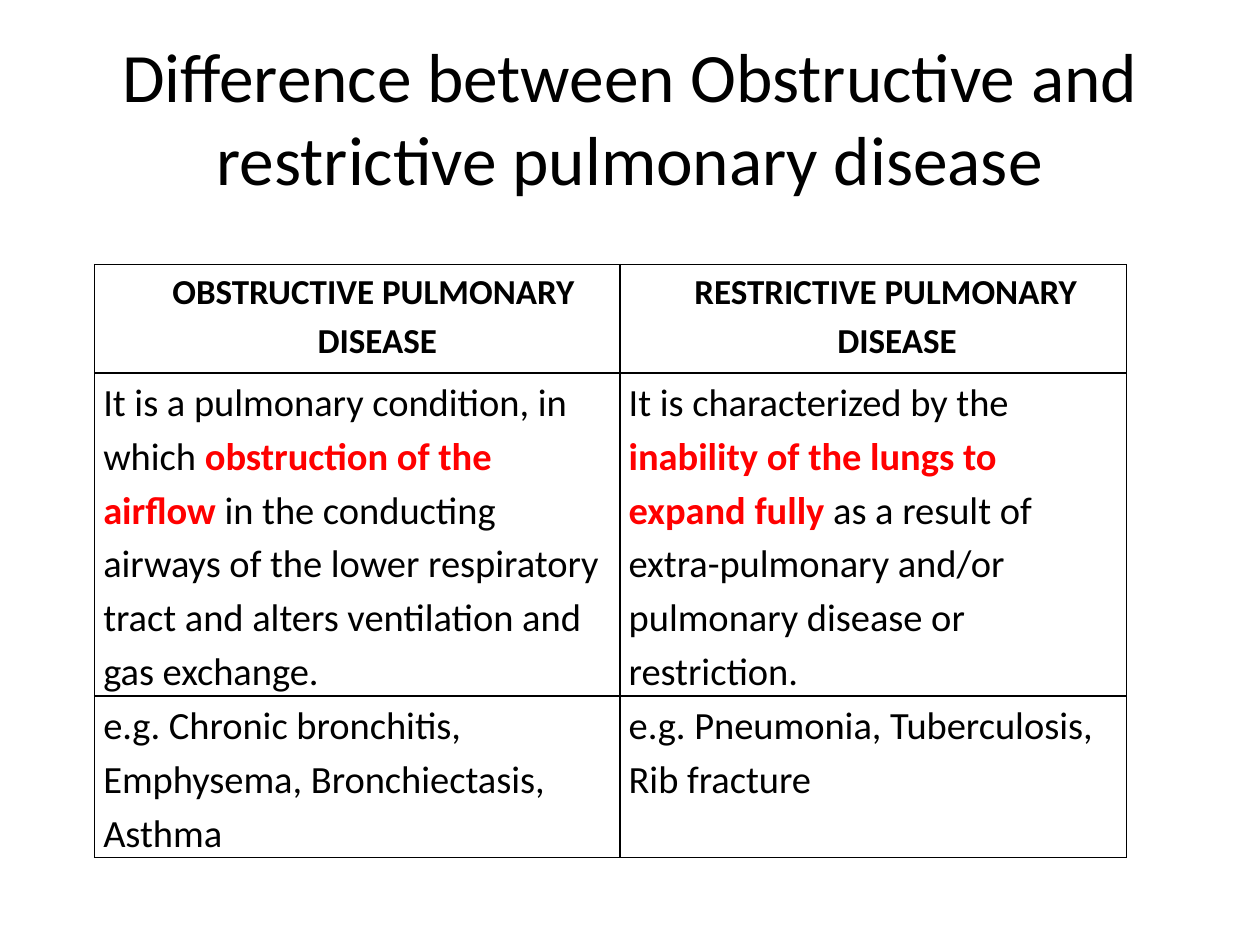
from dataclasses import dataclass

from lxml.etree import SubElement
from pptx import Presentation
from pptx.dml.color import RGBColor
from pptx.enum.text import MSO_ANCHOR, MSO_AUTO_SIZE, PP_ALIGN
from pptx.oxml.ns import qn
from pptx.util import Inches, Pt


@dataclass(frozen=True)
class Theme:
    font: str = "Calibri"
    ink: str = "000000"
    accent: str = "FF0000"
    title_size: float = 39.6
    header_size: float = 20
    body_size: float = 22
    line_spacing: float = 1.15
    border_width: float = 1
    cell_margin: float = 0.07


THEME = Theme()

TITLE = "Difference between Obstructive and restrictive pulmonary disease"
# Each header has its text, left margin and first-line indent in inches.
HEADERS = [
    ("OBSTRUCTIVE PULMONARY DISEASE", 0.32, -0.06),
    ("RESTRICTIVE PULMONARY DISEASE", 0.38, -0.18),
]
# Each cell is a list of (text, highlighted) runs.
BODY_ROWS = [
    [
        [
            ("It is a pulmonary condition, in which ", False),
            ("obstruction of the airflow ", True),
            ("in the conducting airways of the lower respiratory tract "
             "and alters ventilation and gas exchange.", False),
        ],
        [
            ("It is characterized by the ", False),
            ("inability of the lungs to expand fully ", True),
            ("as a result of extra-pulmonary and/or pulmonary disease "
             "or restriction.", False),
        ],
    ],
    [
        [("e.g. Chronic bronchitis, Emphysema, Bronchiectasis, Asthma", False)],
        [("e.g. Pneumonia, Tuberculosis, Rib fracture", False)],
    ],
]
COLUMN_WIDTHS = [4.17, 4.02]
ROW_HEIGHTS = [0.86, 1.82, 0.86]


def add_run(paragraph, text, size, color=THEME.ink, bold=False):
    run = paragraph.add_run()
    run.text = text
    run.font.name = THEME.font
    run.font.size = Pt(size)
    run.font.bold = bold
    run.font.color.rgb = RGBColor.from_string(color)


def place_title(slide, left, top, width, height):
    title = slide.shapes.title
    title.left, title.top = Inches(left), Inches(top)
    title.width, title.height = Inches(width), Inches(height)
    frame = title.text_frame
    frame.word_wrap = True
    frame.auto_size = MSO_AUTO_SIZE.NONE
    frame.vertical_anchor = MSO_ANCHOR.MIDDLE
    paragraph = frame.paragraphs[0]
    paragraph.alignment = PP_ALIGN.CENTER
    add_run(paragraph, TITLE, THEME.title_size)


def style_cell(cell):
    """Clear the fill, set the margins and draw all four borders."""
    cell.margin_left = cell.margin_right = Inches(THEME.cell_margin)
    cell.margin_top = cell.margin_bottom = 0
    cell.vertical_anchor = MSO_ANCHOR.TOP
    properties = cell._tc.get_or_add_tcPr()
    for side in ("a:lnL", "a:lnR", "a:lnT", "a:lnB"):
        line = SubElement(properties, qn(side), w=str(Pt(THEME.border_width)))
        fill = SubElement(line, qn("a:solidFill"))
        SubElement(fill, qn("a:srgbClr"), val=THEME.ink)
    cell.fill.background()
    cell.text_frame.paragraphs[0].line_spacing = THEME.line_spacing


def fill_header(cell, text, margin, indent):
    paragraph = cell.text_frame.paragraphs[0]
    paragraph.alignment = PP_ALIGN.CENTER
    properties = paragraph._p.get_or_add_pPr()
    properties.set("marL", str(Inches(margin)))
    properties.set("indent", str(Inches(indent)))
    add_run(paragraph, text, THEME.header_size, bold=True)


def fill_body(cell, runs):
    paragraph = cell.text_frame.paragraphs[0]
    for text, highlighted in runs:
        color = THEME.accent if highlighted else THEME.ink
        add_run(paragraph, text, THEME.body_size, color, highlighted)


def place_comparison(slide, left, top, width, height):
    frame = slide.shapes.add_table(
        len(ROW_HEIGHTS), len(COLUMN_WIDTHS),
        Inches(left), Inches(top), Inches(width), Inches(height))
    table = frame.table
    table.horz_banding = False
    table.first_row = False
    for column, column_width in zip(table.columns, COLUMN_WIDTHS):
        column.width = Inches(column_width)
    for row, row_height in zip(table.rows, ROW_HEIGHTS):
        row.height = Inches(row_height)
    frame.height = Inches(height)

    for cell in table.iter_cells():
        style_cell(cell)
    for column, header in enumerate(HEADERS):
        fill_header(table.cell(0, column), *header)
    for row, cells in enumerate(BODY_ROWS, start=1):
        for column, runs in enumerate(cells):
            fill_body(table.cell(row, column), runs)


def main():
    presentation = Presentation()
    presentation.slide_width = Inches(10)
    presentation.slide_height = Inches(7.5)
    slide = presentation.slides.add_slide(presentation.slide_layouts[5])
    place_title(slide, 0.5, 0.3, 9, 1.25)
    place_comparison(slide, 0.75, 2.1, sum(COLUMN_WIDTHS), 4.6)
    presentation.save("out.pptx")


if __name__ == "__main__":
    main()
